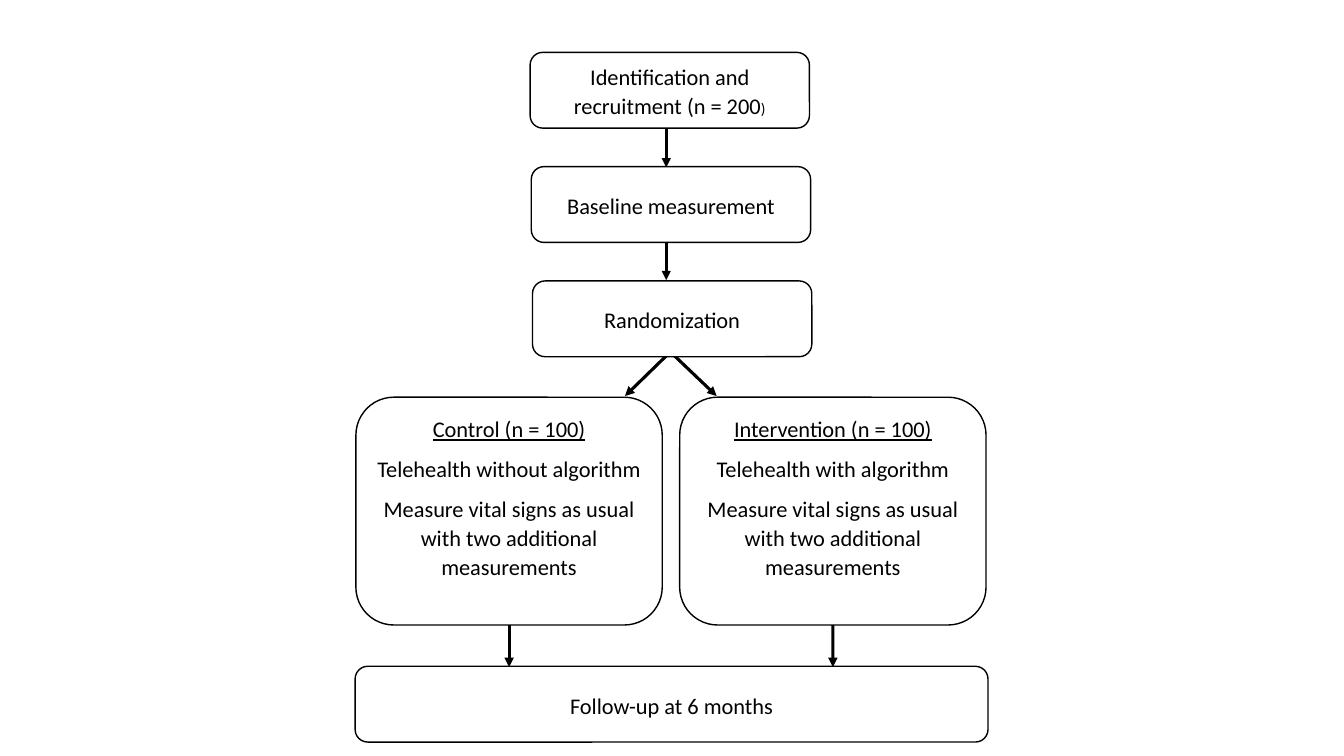
from dataclasses import dataclass

import pptx
import pptx.dml.color
import pptx.enum.shapes
import pptx.enum.text
import pptx.oxml
import pptx.oxml.ns
import pptx.shapes.autoshape
import pptx.shapes.connector
import pptx.slide
import pptx.util

Cm = pptx.util.Cm
Pt = pptx.util.Pt
RGBColor = pptx.dml.color.RGBColor
ANCHOR = pptx.enum.text.MSO_ANCHOR

BLACK = RGBColor(0x00, 0x00, 0x00)
WHITE = RGBColor(0xFF, 0xFF, 0xFF)

FONT = {"name": "Calibri", "size": Pt(16)}
PARAGRAPH = {"alignment": pptx.enum.text.PP_ALIGN.CENTER, "line_spacing": 1.07}
FRAME = {
    "word_wrap": True,
    "margin_left": Cm(0.25),
    "margin_right": Cm(0.25),
    "margin_top": Cm(0.13),
    "margin_bottom": Cm(0.13),
}
BOTTOM = 2


@dataclass(frozen=True)
class Run:
    text: str
    size: float = 16
    underline: bool = False


@dataclass(frozen=True)
class Box:
    key: str
    left: float
    top: float
    width: float
    height: float
    paragraphs: tuple[tuple[Run, ...], ...]
    anchor: ANCHOR = ANCHOR.MIDDLE


@dataclass(frozen=True)
class Arrow:
    x1: float
    y1: float
    x2: float
    y2: float
    start: str = ""  # key of the box whose bottom middle it leaves


def step_box(i: int, key: str, *runs: Run) -> Box:
    return Box(key, 13.36 + 0.03 * i, 1.32 + 2.88 * i, 7.04, 1.91, (runs,))


def arm_box(key: str, left: float, title: str, care: str) -> Box:
    measures = "Measure vital signs as usual with two additional measurements"
    text = ((Run(title, underline=True),), (Run(care),), (Run(measures),))
    return Box(key, left, 10.01, 7.72, 5.74, text, ANCHOR.TOP)


# Flow chart content
BOXES = [
    step_box(0, "recruitment", Run("Identification and recruitment (n = 200"), Run(")", 11)),
    step_box(1, "baseline", Run("Baseline measurement")),
    step_box(2, "randomization", Run("Randomization")),
    arm_box("control", 8.97, "Control (n = 100)", "Telehealth without algorithm"),
    arm_box("intervention", 17.13, "Intervention (n = 100)", "Telehealth with algorithm"),
    Box("follow-up", 8.95, 16.79, 15.95, 1.91, ((Run("Follow-up at 6 months"),),)),
]
ARROWS = [
    Arrow(20.99, 15.75, 20.99, 16.81, "intervention"),
    Arrow(12.83, 15.75, 12.83, 16.81, "control"),
    Arrow(16.97, 8.94, 18.06, 9.98),
    Arrow(16.87, 8.89, 15.75, 9.98),
    Arrow(16.79, 5.92, 16.79, 7.06),
    Arrow(16.79, 3.05, 16.79, 4.22),
]


def apply(target: object, values: dict) -> None:
    for name, value in values.items():
        setattr(target, name, value)


def add_box(s: pptx.slide.Slide, box: Box) -> pptx.shapes.autoshape.Shape:
    sp = s.shapes.add_shape(
        pptx.enum.shapes.MSO_SHAPE.ROUNDED_RECTANGLE,
        Cm(box.left), Cm(box.top), Cm(box.width), Cm(box.height),
    )
    sp.shadow.inherit = False
    sp.fill.solid()
    sp.fill.fore_color.rgb = WHITE
    sp.line.color.rgb = BLACK
    sp.line.width = Pt(1)

    tf = sp.text_frame
    apply(tf, FRAME | {"vertical_anchor": box.anchor})
    for i, runs in enumerate(box.paragraphs):
        p = tf.add_paragraph() if i else tf.paragraphs[0]
        apply(p, PARAGRAPH | {"space_before": Pt(8 if i else 0)})
        for run in runs:
            r = p.add_run()
            r.text = run.text
            apply(r.font, FONT | {"size": Pt(run.size), "underline": run.underline})
            r.font.color.rgb = BLACK
    return sp


def add_arrow(s: pptx.slide.Slide, arrow: Arrow) -> pptx.shapes.connector.Connector:
    cxn = s.shapes.add_connector(
        pptx.enum.shapes.MSO_CONNECTOR.STRAIGHT,
        Cm(arrow.x1), Cm(arrow.y1), Cm(arrow.x2), Cm(arrow.y2),
    )
    cxn.line.color.rgb = BLACK
    cxn.line.width = Pt(2.25)

    # Arrowhead at the end, and no shadow
    ln = cxn.line._get_or_add_ln()
    tail = pptx.oxml.parse_xml(f'<a:tailEnd {pptx.oxml.ns.nsdecls("a")} type="triangle"/>')
    ln.append(tail)
    effects = pptx.oxml.parse_xml(f'<a:effectLst {pptx.oxml.ns.nsdecls("a")}/>')
    ln.addnext(effects)
    return cxn


def main() -> None:
    prs = pptx.Presentation()
    prs.slide_width, prs.slide_height = Cm(33.87), Cm(19.05)
    s = prs.slides.add_slide(prs.slide_layouts[6])

    # Arrows lie behind the boxes
    connectors = [add_arrow(s, arrow) for arrow in ARROWS]
    shapes = {box.key: add_box(s, box) for box in BOXES}

    # Join the arrows that leave the middle of a box
    for cxn, arrow in zip(connectors, ARROWS):
        if arrow.start:
            cxn.begin_connect(shapes[arrow.start], BOTTOM)

    prs.save("out.pptx")


if __name__ == "__main__":
    main()
